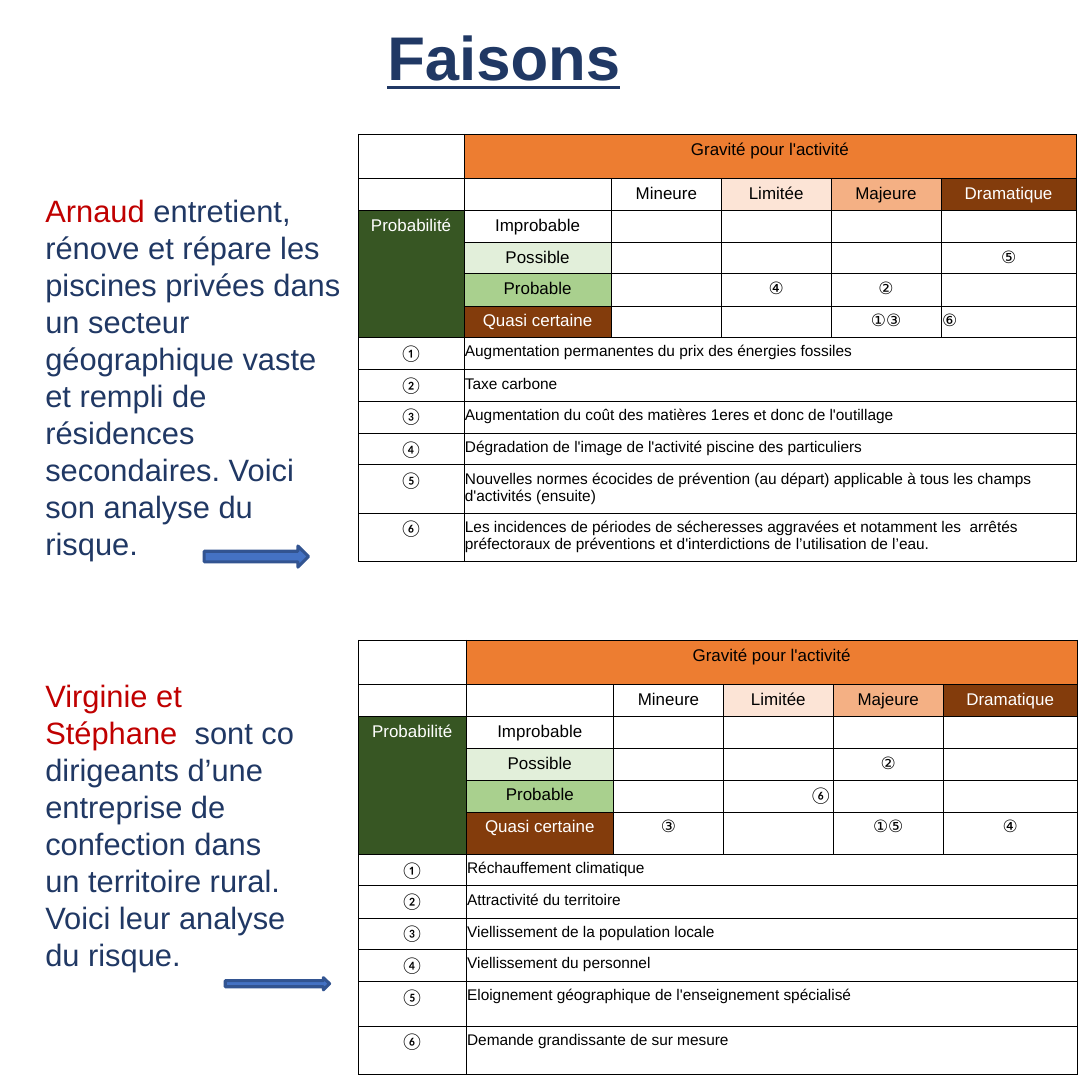
"""Build the slide of two risk matrices, each with its introduction and legend."""
from dataclasses import dataclass

from lxml import etree
from pptx import Presentation
from pptx.dml.color import RGBColor
from pptx.enum.shapes import MSO_SHAPE
from pptx.enum.text import MSO_ANCHOR, PP_ALIGN
from pptx.oxml.ns import qn
from pptx.util import Inches, Pt


@dataclass(frozen=True)
class Theme:
    navy: str = "203864"
    red: str = "C00000"
    black: str = "000000"
    white: str = "FFFFFF"
    orange: str = "ED7D31"
    peach: str = "FCE4D6"
    salmon: str = "F4B084"
    brown: str = "833C0C"
    forest: str = "375623"
    mint: str = "E2EFDA"
    leaf: str = "A9D08E"
    blue: str = "4472C4"
    dark_blue: str = "325491"
    title_size: int = 40
    intro_size: int = 20
    matrix_size: int = 11
    legend_size: int = 10
    border: float = 0.5
    font: str = "Arial"
    number_font: str = "Calibri"


theme = Theme()


def write(paragraph, text, size=theme.matrix_size, color=theme.black, font=theme.font,
          align=PP_ALIGN.LEFT, bold=False, underline=False):
    paragraph.alignment = align
    run = paragraph.add_run()
    run.text = text
    run.font.name = font
    run.font.size = Pt(size)
    run.font.bold = bold
    run.font.underline = underline
    run.font.color.rgb = RGBColor.from_string(color)


def draw_borders(cell):
    properties = cell._tc.get_or_add_tcPr()
    for side in ("a:lnL", "a:lnR", "a:lnT", "a:lnB"):
        line = etree.SubElement(properties, qn(side), w=str(Pt(theme.border)))
        fill = etree.SubElement(line, qn("a:solidFill"))
        etree.SubElement(fill, qn("a:srgbClr"), val=theme.black)


presentation = Presentation()
presentation.slide_width = presentation.slide_height = Inches(9.84)
slide = presentation.slides.add_slide(presentation.slide_layouts[5])

title = slide.shapes.title
title.left, title.top, title.width, title.height = map(Inches, (3.42, 0.13, 2.47, 0.74))
heading = title.text_frame
heading.margin_left = heading.margin_right = Inches(0.07)
heading.margin_top = heading.margin_bottom = Inches(0.04)
heading.vertical_anchor = MSO_ANCHOR.TOP
write(heading.paragraphs[0], "Faisons", size=theme.title_size, color=theme.navy,
      bold=True, underline=True)

severities = [("Mineure", None), ("Limitée", theme.peach),
              ("Majeure", theme.salmon), ("Dramatique", theme.brown)]
likelihoods = [("Improbable", None), ("Possible", theme.mint),
               ("Probable", theme.leaf), ("Quasi certaine", theme.brown)]
labels = {(0, 1): ("Gravité pour l'activité", theme.orange),
          (2, 0): ("Probabilité", theme.forest)}
labels.update({(1, 2 + i): severity for i, severity in enumerate(severities)})
labels.update({(2 + i, 1): likelihood for i, likelihood in enumerate(likelihoods)})
dark_fills = (theme.brown, theme.forest)
first_legend_row = 6

analyses = [
    {
        "intro_box": (0.31, 1.68, 2.91, 3.43),
        "people": "Arnaud",
        "story": " entretient, rénove et répare les piscines privées dans un secteur "
                 "géographique vaste et rempli de résidences secondaires. "
                 "Voici son analyse du risque.",
        "arrow_box": (1.84, 4.92, 0.94, 0.19),
        "top": 1.21,
        "columns": (0.95, 1.33, 0.99, 0.99, 0.99, 1.22),
        "rows": (0.4, 0.28, 0.29, 0.28, 0.29, 0.28, 0.29, 0.28, 0.29, 0.28, 0.43, 0.43),
        "marks": {(3, 5): "⑤", (4, 3): "④", (4, 4): "②", (5, 4): "①③", (5, 5): "⑥"},
        "mark_formats": {(5, 5): {"align": PP_ALIGN.LEFT}},
        "risks": [
            "Augmentation permanentes du prix des énergies fossiles",
            "Taxe carbone",
            "Augmentation du coût des matières 1eres et donc de l'outillage",
            "Dégradation de l'image de l'activité piscine des particuliers",
            "Nouvelles normes écocides de prévention (au départ) applicable à tous "
            "les champs d'activités (ensuite)",
            "Les incidences de périodes de sécheresses aggravées et notamment les  arrêtés "
            "préfectoraux de préventions et d'interdictions de l’utilisation de l’eau.",
        ],
    },
    {
        "intro_box": (0.31, 6.05, 2.47, 2.77),
        "people": "Virginie et Stéphane ",
        "story": " sont co dirigeants d’une entreprise de confection dans un territoire "
                 "rural. Voici leur analyse du risque.",
        "arrow_box": (2.03, 8.81, 0.94, 0.11),
        "top": 5.77,
        "columns": (0.97, 1.33, 0.99, 0.99, 0.99, 1.21),
        "rows": (0.4, 0.28, 0.29, 0.28, 0.29, 0.38, 0.28, 0.29, 0.28, 0.29, 0.4, 0.44),
        "marks": {(3, 4): "②", (4, 3): "⑥", (5, 2): "③", (5, 4): "①⑤", (5, 5): "④"},
        "mark_formats": {(4, 3): {"align": PP_ALIGN.RIGHT, "font": theme.number_font}},
        "risks": [
            "Réchauffement climatique",
            "Attractivité du territoire",
            "Viellissement de la population locale",
            "Viellissement du personnel",
            "Eloignement géographique de l'enseignement spécialisé",
            "Demande grandissante de sur mesure",
        ],
    },
]

for analysis in analyses:
    intro = slide.shapes.add_textbox(*map(Inches, analysis["intro_box"])).text_frame
    intro.word_wrap = True
    for text, color in ((analysis["people"], theme.red), (analysis["story"], theme.navy)):
        write(intro.paragraphs[0], text, size=theme.intro_size, color=color)

    columns, rows = analysis["columns"], analysis["rows"]
    matrix = slide.shapes.add_table(
        len(rows), len(columns), Inches(3.23), Inches(analysis["top"]),
        Inches(sum(columns)), Inches(sum(rows))).table
    matrix.first_row = matrix.horz_banding = False
    for column, width in zip(matrix.columns, columns):
        column.width = Inches(width)
    for row, height in zip(matrix.rows, rows):
        row.height = Inches(height)

    contents = {}
    for position, (text, fill) in labels.items():
        color = theme.white if fill in dark_fills else theme.black
        contents[position] = (text, fill, {"align": PP_ALIGN.CENTER, "color": color})
    for position, mark in analysis["marks"].items():
        mark_format = analysis["mark_formats"].get(position, {})
        contents[position] = (mark, None, {"align": PP_ALIGN.CENTER} | mark_format)
    for i, (number, risk) in enumerate(zip("①②③④⑤⑥", analysis["risks"])):
        contents[first_legend_row + i, 0] = (
            number, None, {"align": PP_ALIGN.CENTER, "font": theme.number_font})
        contents[first_legend_row + i, 1] = (risk, None, {"size": theme.legend_size})

    for r in range(len(rows)):
        for c in range(len(columns)):
            cell = matrix.cell(r, c)
            cell.margin_left = cell.margin_right = Inches(0.01)
            cell.margin_top = cell.margin_bottom = Inches(0.05)
            draw_borders(cell)
            text, fill, text_format = contents.get((r, c), ("", None, {}))
            if fill:
                cell.fill.solid()
                cell.fill.fore_color.rgb = RGBColor.from_string(fill)
            else:
                cell.fill.background()
            paragraph = cell.text_frame.paragraphs[0]
            if text:
                write(paragraph, text, **text_format)
            else:
                etree.SubElement(paragraph._p, qn("a:endParaRPr"),
                                 sz=str(theme.matrix_size * 100))

    for r in (0, *range(first_legend_row, len(rows))):
        matrix.cell(r, 1).merge(matrix.cell(r, 5))
    matrix.cell(2, 0).merge(matrix.cell(5, 0))

    arrow = slide.shapes.add_shape(MSO_SHAPE.RIGHT_ARROW, *map(Inches, analysis["arrow_box"]))
    arrow.shadow.inherit = False
    arrow.fill.solid()
    arrow.fill.fore_color.rgb = RGBColor.from_string(theme.blue)
    arrow.line.color.rgb = RGBColor.from_string(theme.dark_blue)
    arrow.line.width = Pt(2)

presentation.save("out.pptx")
